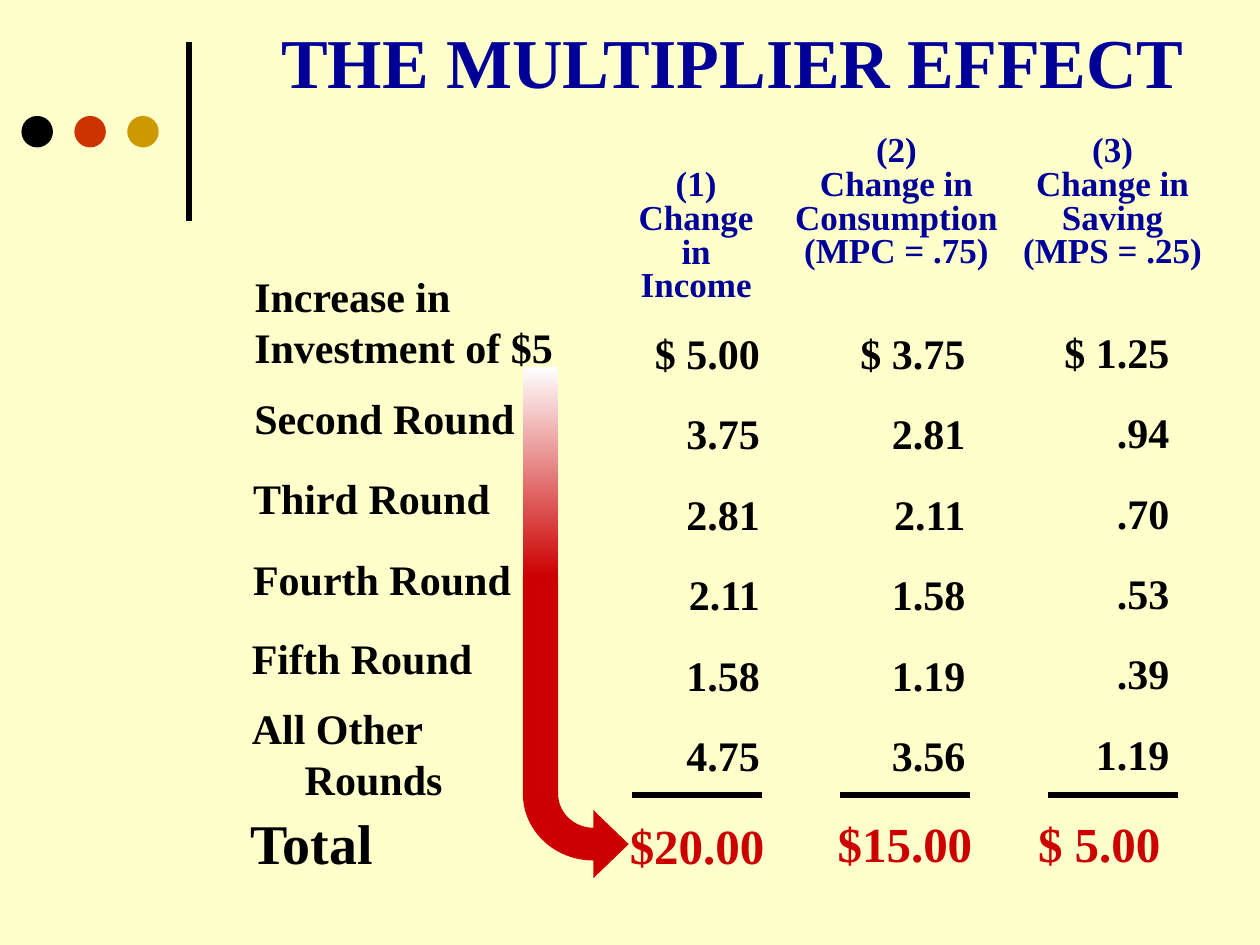
from math import cos, pi, sin

from pptx import Presentation
from pptx.dml.color import RGBColor
from pptx.enum.shapes import MSO_CONNECTOR, MSO_SHAPE
from pptx.enum.text import MSO_ANCHOR, MSO_AUTO_SIZE, PP_ALIGN
from pptx.oxml.ns import qn
from pptx.util import Pt
from lxml.etree import SubElement

PX = 9144  # 100 px to the inch
FONT = "Times New Roman"
HUES = {"paper": "FFFFCC", "ink": "000000", "navy": "000099", "red": "CC0000",
        "rust": "CC3300", "gold": "CC9900", "white": "FFFFFF"}

# Left, top, width, height and lines of each row label
LABELS = [
    (210, 257, 90, ["Increase in", "Investment of $5"]),
    (307, 227, 50, ["Second Round"]),
    (370, 208, 50, ["Third Round"]),
    (434, 225, 50, ["Fourth Round"]),
    (497, 195, 50, ["Fifth Round"]),
    (553, 171, 90, ["All Other", "Rounds"]),
    (637, 121, 63, ["Total"]),
]

# Heading box, heading lines, values and their box, total and its box, rule start
COLUMNS = [
    ((482, 130, 141, 90), ["(1)", "Change in", "Income"],
     (501, 237), ["$ 5.00", "3.75", "2.81", "2.11", "1.58", "4.75"],
     (490, 642), "$20.00", 502),
    ((621, 103, 181, 117), ["(2)", "Change in", "Consumption", "(MPC = .75)"],
     (664, 237), ["$ 3.75", "2.81", "2.11", "1.58", "1.19", "3.56"],
     (655, 641), "$15.00", 667),
    ((802, 103, 162, 117), ["(3)", "Change in", "Saving", "(MPS = .25)"],
     (826, 236), ["$ 1.25", ".94", ".70", ".53", ".39", "1.19"],
     (814, 641), "$ 5.00", 832),
]


def rgb(hue):
    return RGBColor.from_string(HUES[hue])


def emu(*nums):
    return [round(n * PX) for n in nums]


def style(frame, lines, size, hue, align=PP_ALIGN.LEFT, space=None, before=None):
    """Fill a text frame with equally formatted paragraphs."""
    frame.word_wrap = False
    frame.text = "\n".join(lines)
    for para in frame.paragraphs:
        para.alignment = align
        para.line_spacing = space
        para.space_before = before
        para.font.name = FONT
        para.font.size = Pt(size)
        para.font.bold = True
        para.font.color.rgb = rgb(hue)


def text(slide, box, lines, size, hue, **look):
    frame = slide.shapes.add_textbox(*emu(*box)).text_frame
    style(frame, lines, size, hue, **look)
    return frame


def line(slide, *ends):
    link = slide.shapes.add_connector(MSO_CONNECTOR.STRAIGHT, *emu(*ends))
    link.line.color.rgb = rgb("ink")
    link.line.width = Pt(3)
    SubElement(link._element.spPr, qn("a:effectLst"))


def plain(shape, hue):
    shape.shadow.inherit = False
    shape.line.fill.background()
    shape.fill.solid()
    shape.fill.fore_color.rgb = rgb(hue)
    return shape


def block(slide, kind, box, hue):
    return plain(slide.shapes.add_shape(kind, *emu(*box)), hue)


def motif(slide, left, top):
    """Three dots beside an upright line."""
    line(slide, left + 133, top + 142, left + 133, top)
    for i, hue in enumerate(["ink", "rust", "gold"]):
        block(slide, MSO_SHAPE.OVAL, (left + 42 * i, top + 59, 25, 25), hue)


def heading(slide, box):
    title = slide.shapes.title
    title.left, title.top, title.width, title.height = emu(*box)
    style(title.text_frame, ["THE MULTIPLIER EFFECT"], 40, "navy",
          align=PP_ALIGN.CENTER)
    title.text_frame.auto_size = MSO_AUTO_SIZE.NONE
    title.text_frame.vertical_anchor = MSO_ANCHOR.TOP


def labels(slide, left):
    """Row labels, which drift one px left every second row."""
    for i, (top, width, height, lines) in enumerate(LABELS):
        size = 32 if lines == ["Total"] else 24
        frame = text(slide, (left - i // 2, top, width, height), lines, size, "ink")
        if lines[-1] == "Rounds":
            props = frame.paragraphs[-1]._p.get_or_add_pPr()
            props.set("marL", str(42 * PX))
            props.set("indent", "0")


def column(slide, head, names, spot, values, foot, total, start):
    """One column: heading, six values, rule and total."""
    text(slide, head, names, 20, "navy", align=PP_ALIGN.CENTER, space=0.8)
    text(slide, (*spot, 112, 378), values, 24, "ink",
         align=PP_ALIGN.RIGHT, space=1.45, before=Pt(4.2))
    text(slide, (*foot, 127, 57), [total], 28, "red")
    line(slide, start, 631, start + 103, 631)


def arc(mid, rise, wide, high, steps=24):
    """Points of a quarter turn from the left of mid to below it."""
    turns = [pi / 2 * i / steps for i in range(steps + 1)]
    return [(mid - wide * cos(t), rise + high * sin(t)) for t in turns]


def arrow(slide, left, top):
    """Fading bar, solid bar and a bend that points at the total."""
    fade = block(slide, MSO_SHAPE.RECTANGLE, (left, top, 28, 167), "red").fill
    fade.gradient()
    fade.gradient_angle = 270
    for stop, hue, place in zip(fade.gradient_stops, ["white", "red"], [0, 1]):
        stop.color.rgb = rgb(hue)
        stop.position = place

    mid, rise = left + 56, top + 339
    tip = [(mid, rise + 67), (mid + 28, rise + 40), (mid, rise + 13)]
    inner = arc(mid, rise, 28, 27)[::-1]
    points = [emu(*p) for p in arc(mid, rise, 56, 53) + tip + inner]
    path = slide.shapes.build_freeform(*points[0], scale=1.0)
    path.add_line_segments(points[1:], close=True)
    plain(path.convert_to_shape(), "red")

    block(slide, MSO_SHAPE.RECTANGLE, (left, top + 167, 28, 172), "red")


def main():
    deck = Presentation()
    deck.slide_width, deck.slide_height = emu(1000, 750)
    slide = deck.slides.add_slide(deck.slide_layouts[5])
    slide.background.fill.solid()
    slide.background.fill.fore_color.rgb = rgb("paper")

    motif(slide, 17, 33)
    heading(slide, (211, 10, 741, 76))
    labels(slide, 192)
    for parts in COLUMNS:
        column(slide, *parts)
    arrow(slide, 415, 291)
    deck.save("out.pptx")


if __name__ == "__main__":
    main()
